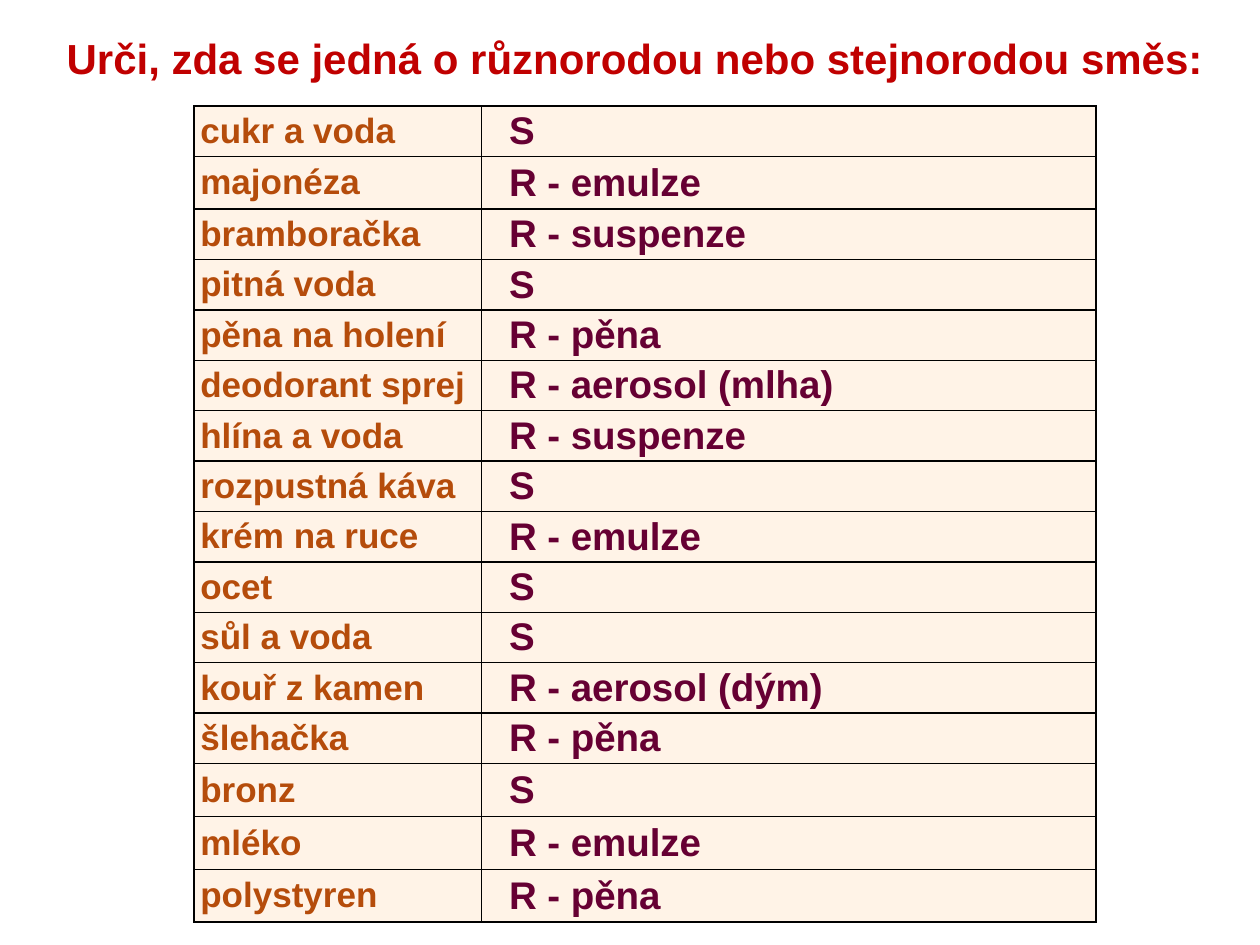
import pptx
import pptx.dml.color
import pptx.enum.text
import pptx.oxml
import pptx.oxml.ns
import pptx.util

Inches = pptx.util.Inches
Pt = pptx.util.Pt
PP_ALIGN = pptx.enum.text.PP_ALIGN

COLORS = {"title": "C00000", "mixture": "B54C0B", "answer": "660033",
          "cell": "FFF3E7", "border": "000000"}

MIXTURES = [
    ("cukr a voda", "S"),
    ("majonéza", "R - emulze"),
    ("bramboračka", "R - suspenze"),
    ("pitná voda", "S"),
    ("pěna na holení", "R - pěna"),
    ("deodorant sprej", "R - aerosol (mlha)"),
    ("hlína a voda", "R - suspenze"),
    ("rozpustná káva", "S"),
    ("krém na ruce", "R - emulze"),
    ("ocet", "S"),
    ("sůl a voda", "S"),
    ("kouř z kamen", "R - aerosol (dým)"),
    ("šlehačka", "R - pěna"),
    ("bronz", "S"),
    ("mléko", "R - emulze"),
    ("polystyren", "R - pěna"),
]
TALL_ROWS = {1, 13, 14, 15}


class SlideBuilder:
    def __init__(self, slide, font="Arial"):
        self.slide = slide
        self.font = font

    def color(self, name):
        return pptx.dml.color.RGBColor.from_string(COLORS[name])

    def run(self, p, text, size, color):
        r = p.add_run()
        r.text = text
        r.font.name = self.font
        r.font.size = Pt(size)
        r.font.bold = True
        r.font.color.rgb = self.color(color)

    def title(self, text, left, top, width, height):
        sp = self.slide.shapes.add_textbox(
            Inches(left), Inches(top), Inches(width), Inches(height))
        tf = sp.text_frame
        tf.word_wrap = True
        tf.auto_size = pptx.enum.text.MSO_AUTO_SIZE.SHAPE_TO_FIT_TEXT
        self.run(tf.paragraphs[0], text, 24, "title")

    def borders(self, cell):
        tc_pr = cell._tc.get_or_add_tcPr()
        for i, side in enumerate(("lnL", "lnR", "lnT", "lnB")):
            tc_pr.insert(i, pptx.oxml.parse_xml(
                f'<a:{side} {pptx.oxml.ns.nsdecls("a")} w="{Pt(1)}"><a:solidFill>'
                f'<a:srgbClr val="{COLORS["border"]}"/></a:solidFill></a:{side}>'))

    def cell(self, cell, text, size, color, align, indent):
        cell.margin_left, cell.margin_right = Inches(indent), Inches(0.05)
        cell.margin_top = cell.margin_bottom = 0
        cell.vertical_anchor = pptx.enum.text.MSO_ANCHOR.MIDDLE
        cell.fill.solid()
        cell.fill.fore_color.rgb = self.color("cell")
        self.borders(cell)
        p = cell.text_frame.paragraphs[0]
        p.alignment = align
        self.run(p, text, size, color)

    def table(self, rows, left, top, widths):
        heights = [0.42 if i in TALL_ROWS else 0.4 for i in range(len(rows))]
        table = self.slide.shapes.add_table(
            len(rows), len(widths), Inches(left), Inches(top),
            Inches(sum(widths)), Inches(sum(heights))).table
        table.first_row = table.horz_banding = False
        for column, width in zip(table.columns, widths):
            column.width = Inches(width)
        for i, (mixture, answer) in enumerate(rows):
            table.rows[i].height = Inches(heights[i])
            self.cell(table.cell(i, 0), mixture, 20, "mixture", PP_ALIGN.JUSTIFY, 0.05)
            self.cell(table.cell(i, 1), answer, 22, "answer", PP_ALIGN.LEFT, 0.22)


def main():
    prs = pptx.Presentation()
    prs.slide_width, prs.slide_height = Inches(10), Inches(7.5)
    s = SlideBuilder(prs.slides.add_slide(prs.slide_layouts[6]))
    s.table(MIXTURES, 1.54, 0.84, (2.28, 4.88))
    s.title("Urči, zda se jedná o různorodou nebo stejnorodou směs:",
            0.43, 0.21, 9.29, 0.5)
    prs.save("out.pptx")


if __name__ == "__main__":
    main()
